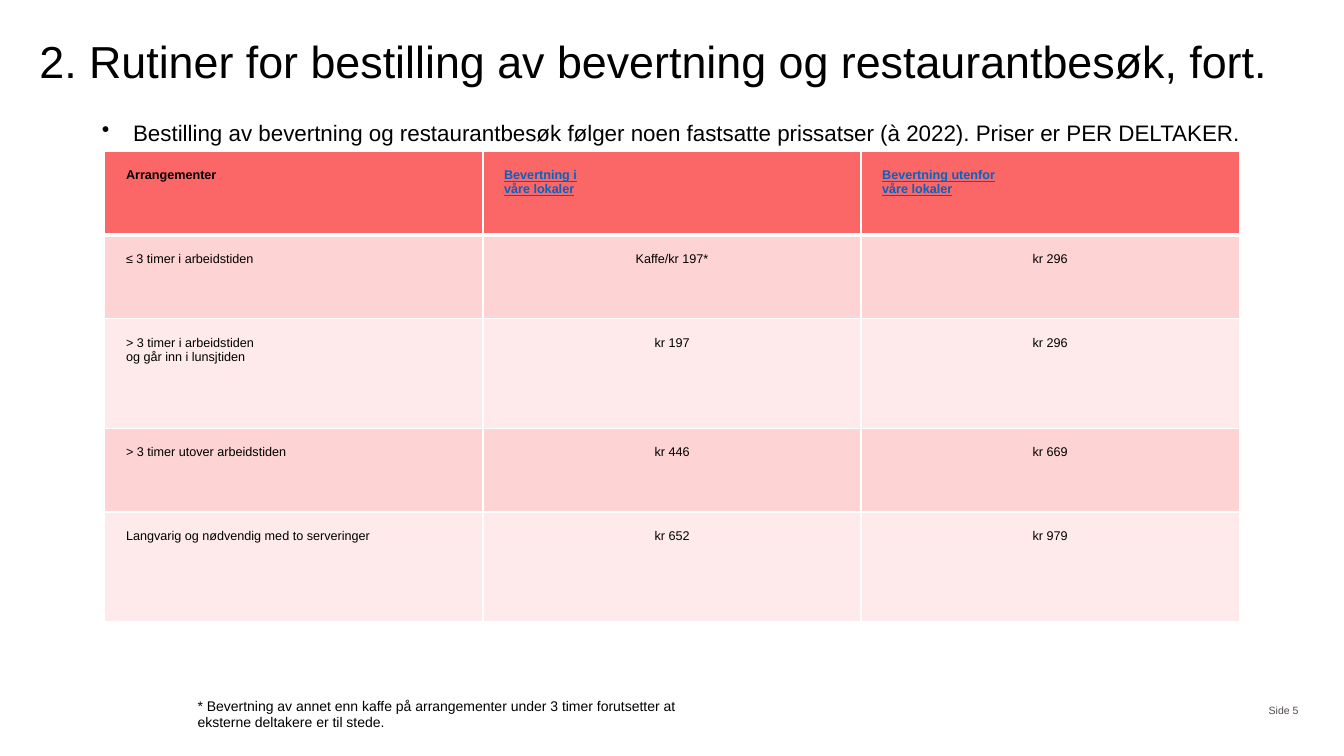
from dataclasses import dataclass

from lxml import etree
from pptx import Presentation
from pptx import util as u
from pptx.dml.color import RGBColor
from pptx.enum import text
from pptx.oxml import ns


@dataclass(frozen=True)
class Theme:
    font: str = "Arial"
    ink: str = "000000"
    muted: str = "524B48"
    link: str = "0563C1"
    border: str = "FFFFFF"
    header_fill: str = "FB6666"
    band_fills: tuple = ("FDD3D3", "FEEAEA")
    title_size: float = 32
    body_size: float = 16
    note_size: float = 10
    cell_size: float = 9
    number_size: float = 7.5


class SlideBuilder:
    """Holds the theme and the current slide."""

    def __init__(self, presentation, theme):
        self.theme = theme
        self.slide = presentation.slides.add_slide(presentation.slide_layouts[6])

    def style(self, paragraph, size, color=None, bold=False, underline=False):
        font = paragraph.font
        font.name = self.theme.font
        font.size = u.Pt(size)
        font.bold = bold
        font.underline = underline
        font.color.rgb = RGBColor.from_string(color or self.theme.ink)

    def add_text(self, words, box, size, color=None, anchor=text.MSO_ANCHOR.TOP,
                 align=text.PP_ALIGN.LEFT):
        shape = self.slide.shapes.add_textbox(*map(u.Inches, box))
        frame = shape.text_frame
        frame.word_wrap = True
        frame.vertical_anchor = anchor
        frame.margin_left = frame.margin_right = 0
        frame.margin_top = frame.margin_bottom = 0
        paragraph = frame.paragraphs[0]
        paragraph.text = words
        paragraph.alignment = align
        self.style(paragraph, size, color)
        return paragraph

    def add_bullet(self, words, box, size, indent, hanging):
        paragraph = self.add_text(words, box, size)
        properties = paragraph._p.get_or_add_pPr()
        properties.set("marL", str(u.Inches(indent)))
        properties.set("indent", str(-u.Inches(hanging)))
        bullet = etree.Element(ns.qn("a:buChar"), char="•")
        properties.insert(0, bullet)

    def add_border(self, cell, side, width):
        line = etree.SubElement(cell._tc.get_or_add_tcPr(), ns.qn(f"a:ln{side}"),
                                w=str(u.Pt(width)))
        fill = etree.SubElement(line, ns.qn("a:solidFill"))
        etree.SubElement(fill, ns.qn("a:srgbClr"), val=self.theme.border)

    def add_cell(self, cell, words, row, column):
        theme = self.theme
        header = row == 0
        cell.margin_left = cell.margin_right = u.Inches(0.21)
        cell.margin_top = cell.margin_bottom = u.Inches(0.17)
        paragraph = cell.text_frame.paragraphs[0]
        paragraph.text = words
        centred = not header and column > 0
        paragraph.alignment = text.PP_ALIGN.CENTER if centred else text.PP_ALIGN.LEFT
        linked = header and column > 0
        self.style(paragraph, theme.cell_size, theme.link if linked else theme.ink,
                   bold=header, underline=linked)

        # Borders come before the fill in the cell properties
        for side in "LRTB":
            heavy = (row, side) in ((0, "B"), (1, "T"))
            self.add_border(cell, side, 3 if heavy else 1)
        cell.fill.solid()
        color = theme.header_fill if header else theme.band_fills[(row - 1) % 2]
        cell.fill.fore_color.rgb = RGBColor.from_string(color)

    def add_table(self, rows, left, top, column_width, row_heights):
        columns = len(rows[0])
        table = self.slide.shapes.add_table(
            len(rows), columns, u.Inches(left), u.Inches(top),
            u.Inches(column_width * columns), u.Inches(sum(row_heights))).table
        table.horz_banding = False
        for column in table.columns:
            column.width = u.Inches(column_width)
        for row, (height, entries) in enumerate(zip(row_heights, rows)):
            table.rows[row].height = u.Inches(height)
            for column, words in enumerate(entries):
                self.add_cell(table.cell(row, column), words, row, column)


PRICES = [
    ("Arrangementer", "Bevertning i\nvåre lokaler", "Bevertning utenfor\nvåre lokaler"),
    ("≤ 3 timer i arbeidstiden", "Kaffe/kr 197*", "kr 296"),
    ("> 3 timer i arbeidstiden\nog går inn i lunsjtiden", "kr 197", "kr 296"),
    ("> 3 timer utover arbeidstiden", "kr 446", "kr 669"),
    ("Langvarig og nødvendig med to serveringer", "kr 652", "kr 979"),
]


def main():
    presentation = Presentation()
    presentation.slide_width = u.Inches(13.33)
    presentation.slide_height = u.Inches(7.5)
    theme = Theme()
    builder = SlideBuilder(presentation, theme)

    # Title and introduction
    title = builder.add_text(
        "2. Rutiner for bestilling av bevertning og restaurantbesøk, fort.",
        (0.39, 0.39, 12.55, 0.59), theme.title_size)
    title.line_spacing = 0.9
    builder.add_bullet(
        "Bestilling av bevertning og restaurantbesøk følger noen fastsatte prissatser "
        "(à 2022). Priser er PER DELTAKER.",
        (0.39, 1.18, 12.55, 0.3), theme.body_size, indent=0.93, hanging=0.31)

    # Price table
    builder.add_table(PRICES, 1.04, 1.5, 3.75, (0.83, 0.83, 1.09, 0.83, 1.09))

    # Footnote and slide number
    builder.add_text(
        "* Bevertning av annet enn kaffe på arrangementer under 3 timer forutsetter at "
        "eksterne deltakere er til stede.",
        (1.96, 6.97, 4.97, 0.28), theme.note_size, anchor=text.MSO_ANCHOR.BOTTOM)
    builder.add_text("Side 5", (12.32, 6.85, 0.56, 0.4), theme.number_size, theme.muted,
                     text.MSO_ANCHOR.MIDDLE, text.PP_ALIGN.RIGHT)

    presentation.save("out.pptx")


if __name__ == "__main__":
    main()
